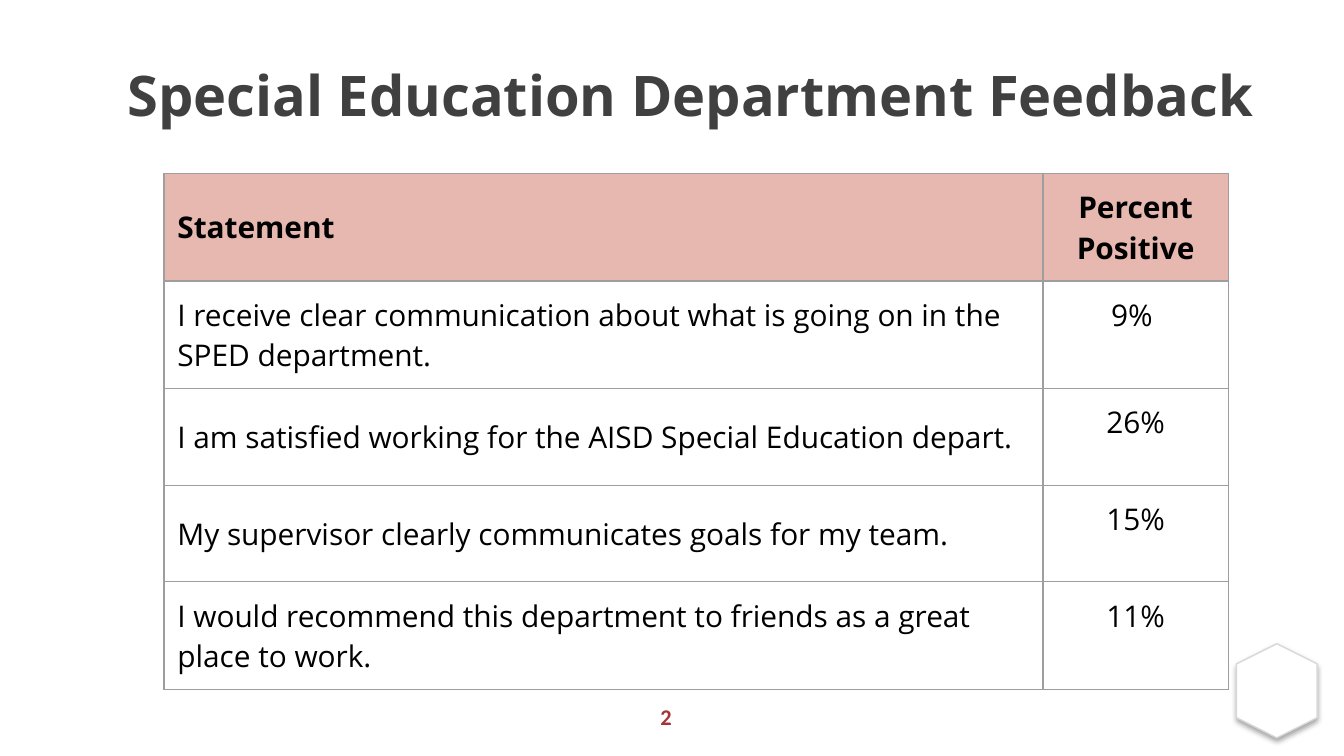
from lxml import etree
from pptx import Presentation
from pptx.dml.color import RGBColor
from pptx.enum import shapes, text
from pptx.oxml.ns import qn
from pptx.util import Inches, Pt

TITLE = "Special Education Department Feedback"
PAGE_NUMBER = "2"
HEADER = ("Statement", "Percent\nPositive")
FEEDBACK = [
    ("I receive clear communication about what is going on in the SPED department.", "9% "),
    ("I am satisfied working for the AISD Special Education depart.", "26%"),
    ("My supervisor clearly communicates goals for my team.", "15%"),
    ("I would recommend this department to friends as a great place to work.", "11%"),
]
COLUMN_WIDTHS = (6.54, 1.38)
ROW_HEIGHTS = (0.8, 0.8, 0.72, 0.72, 0.8)
COLORS = {
    "title": "404040", "page": "A53338", "body": "000000", "header": "E6B8AF",
    "border": "9E9E9E", "hexagon": "FFFFFF", "outline": "D8D8D8", "shadow": "000000",
}


def rgb(name):
    return RGBColor.from_string(COLORS[name])


def style(paragraph, size, font, color, bold=False, align=text.PP_ALIGN.LEFT):
    paragraph.alignment = align
    paragraph.font.size = Pt(size)
    paragraph.font.name = font
    paragraph.font.bold = bold
    paragraph.font.color.rgb = rgb(color)


def add_label(slide, words, box, *look, **options):
    frame = slide.shapes.add_textbox(*map(Inches, box)).text_frame
    frame.word_wrap = True
    frame.vertical_anchor = text.MSO_ANCHOR.MIDDLE
    frame.text = words
    style(frame.paragraphs[0], *look, **options)


def add_borders(cell):
    properties = cell._tc.get_or_add_tcPr()
    for side in ("a:lnL", "a:lnR", "a:lnT", "a:lnB"):
        line = etree.SubElement(properties, qn(side), w=str(Pt(0.75)))
        fill = etree.SubElement(line, qn("a:solidFill"))
        etree.SubElement(fill, qn("a:srgbClr"), val=COLORS["border"])


def add_hexagon(slide):
    hexagon = slide.shapes.add_shape(
        shapes.MSO_SHAPE.HEXAGON, *map(Inches, (9.15, 4.84, 0.7, 0.6)))
    hexagon.adjustments[0] = 0.25
    hexagon.rotation = 90
    hexagon.fill.solid()
    hexagon.fill.fore_color.rgb = rgb("hexagon")
    hexagon.line.color.rgb = rgb("outline")
    hexagon.line.width = Pt(0.75)
    hexagon.shadow.inherit = False
    effects = hexagon._element.spPr.find(qn("a:effectLst"))
    shadow = etree.SubElement(
        effects, qn("a:outerShdw"), blurRad=str(Pt(3.1)), dist=str(Pt(1.8)),
        dir="5400000", rotWithShape="0")
    color = etree.SubElement(shadow, qn("a:srgbClr"), val=COLORS["shadow"])
    etree.SubElement(color, qn("a:alpha"), val="35000")


def add_feedback_table(slide):
    rows = [HEADER, *FEEDBACK]
    table = slide.shapes.add_table(
        len(rows), len(HEADER), Inches(1.22), Inches(1.29),
        Inches(sum(COLUMN_WIDTHS)), Inches(sum(ROW_HEIGHTS))).table
    table.horz_banding = False
    for column, width in zip(table.columns, COLUMN_WIDTHS):
        column.width = Inches(width)
    for r, (row, height) in enumerate(zip(rows, ROW_HEIGHTS)):
        table.rows[r].height = Inches(height)
        for c, words in enumerate(row):
            cell = table.cell(r, c)
            cell.text = words
            cell.margin_left = cell.margin_right = Inches(0.1)
            cell.margin_top = cell.margin_bottom = Inches(0.1)
            cell.vertical_anchor = text.MSO_ANCHOR.TOP if c else text.MSO_ANCHOR.MIDDLE
            add_borders(cell)
            if r == 0:
                cell.fill.solid()
                cell.fill.fore_color.rgb = rgb("header")
            else:
                cell.fill.background()
            align = text.PP_ALIGN.CENTER if c else text.PP_ALIGN.LEFT
            for paragraph in cell.text_frame.paragraphs:
                style(paragraph, 16, "Open Sans", "body", bold=r == 0, align=align)


def main():
    deck = Presentation()
    deck.slide_width = Inches(10)
    deck.slide_height = deck.slide_width * 9 // 16
    slide = deck.slides.add_slide(deck.slide_layouts[6])
    add_hexagon(slide)
    add_label(slide, TITLE, (0.85, 0.23, 8.65, 0.94), 30, "Open Sans", "title", bold=True)
    add_label(slide, PAGE_NUMBER, (3.79, 5.18, 2.33, 0.3), 12, "Calibri", "page",
              bold=True, align=text.PP_ALIGN.CENTER)
    add_feedback_table(slide)
    deck.save("out.pptx")


if __name__ == "__main__":
    main()
